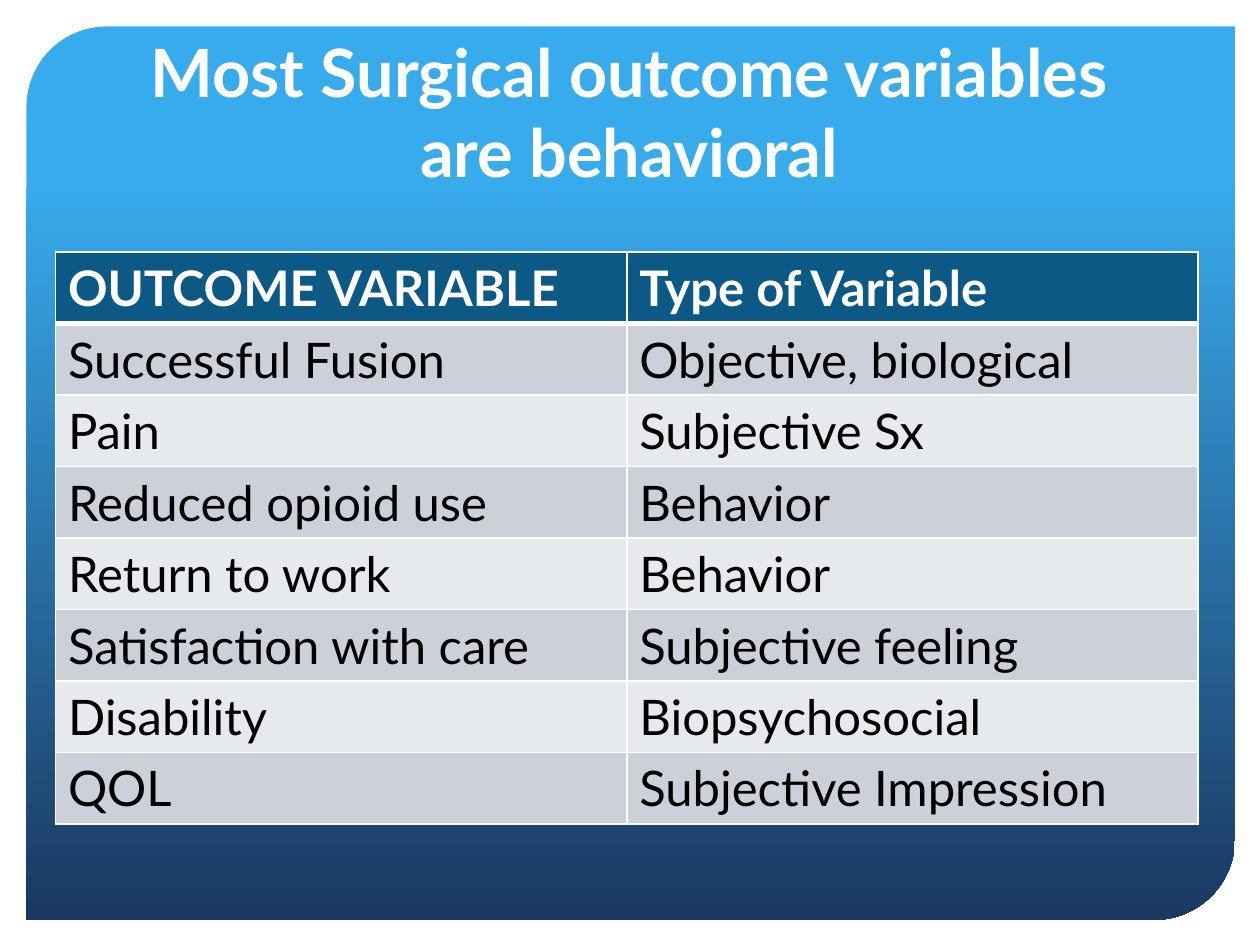
from lxml import etree
from pptx import Presentation
from pptx.dml.color import RGBColor
from pptx.enum import shapes, text
from pptx.oxml.ns import qn
from pptx.util import Inches, Pt

FONT = "Lato"
WHITE = RGBColor(0xFF, 0xFF, 0xFF)
BLACK = RGBColor(0, 0, 0)
SKY = RGBColor(0x38, 0xAB, 0xED)
NAVY = RGBColor(0x1B, 0x38, 0x61)
TEAL = RGBColor(0x0C, 0x59, 0x86)
BANDS = RGBColor(0xCC, 0xD1, 0xD9), RGBColor(0xE7, 0xEA, 0xED)

ROWS = [
    ("OUTCOME VARIABLE", "Type of Variable"),
    ("Successful Fusion", "Objective, biological"),
    ("Pain", "Subjective Sx"),
    ("Reduced opioid use", "Behavior"),
    ("Return to work", "Behavior"),
    ("Satisfaction with care", "Subjective feeling"),
    ("Disability", "Biopsychosocial"),
    ("QOL", "Subjective Impression"),
]


def style(para, size, color, bold):
    for run in para.runs:
        font = run.font
        font.name, font.size, font.bold = FONT, Pt(size), bold
        font.color.rgb = color


def add_panel(slide, box):
    panel = slide.shapes.add_shape(
        shapes.MSO_SHAPE.ROUND_2_DIAG_RECTANGLE, *map(Inches, box))
    panel.shadow.inherit = False
    panel.adjustments[0] = 0.09
    panel.adjustments[1] = 0
    panel.line.fill.background()
    panel.fill.gradient()
    panel.fill.gradient_angle = 270
    for stop, pos, color in zip(panel.fill.gradient_stops, (0.17, 1), (SKY, NAVY)):
        stop.position = pos
        stop.color.rgb = color


def add_title(slide, box, words):
    frame = slide.shapes.add_textbox(*map(Inches, box)).text_frame
    frame.word_wrap = True
    frame.vertical_anchor = text.MSO_ANCHOR.BOTTOM
    frame.text = words
    para = frame.paragraphs[0]
    para.alignment = text.PP_ALIGN.CENTER
    style(para, 38, WHITE, True)


def add_edges(cell, widths):
    """Draw white cell borders; widths are points for left, right, top, bottom."""
    props = cell._tc.get_or_add_tcPr()
    for i, (side, width) in enumerate(zip("LRTB", widths)):
        line = etree.Element(qn(f"a:ln{side}"), w=str(Pt(width)))
        fill = etree.SubElement(line, qn("a:solidFill"))
        etree.SubElement(fill, qn("a:srgbClr"), val=str(WHITE))
        props.insert(i, line)


def add_grid(slide, box, rows):
    left, top, width, height = map(Inches, box)
    count = len(rows[0])
    grid = slide.shapes.add_table(len(rows), count, left, top, width, height).table
    for col in grid.columns:
        col.width = width // count
    for i, row in enumerate(rows):
        grid.rows[i].height = height // len(rows)
        head = i == 0
        for j, words in enumerate(row):
            cell = grid.cell(i, j)
            cell.text = words
            cell.fill.solid()
            cell.fill.fore_color.rgb = TEAL if head else BANDS[(i - 1) % 2]
            style(cell.text_frame.paragraphs[0], 28, WHITE if head else BLACK, head)
            add_edges(cell, (1, 1, 3 if i == 1 else 1, 3 if head else 1))


def main():
    deck = Presentation()
    deck.slide_width, deck.slide_height = Inches(10), Inches(7.5)
    slide = deck.slides.add_slide(deck.slide_layouts[6])
    add_panel(slide, (0.21, 0.21, 9.59, 7.09))
    add_title(slide, (0.85, 0.42, 8.29, 1.14),
              "Most Surgical outcome variables are behavioral")
    add_grid(slide, (0.44, 2, 9.07, 4.53), ROWS)
    deck.save("out.pptx")


if __name__ == "__main__":
    main()
